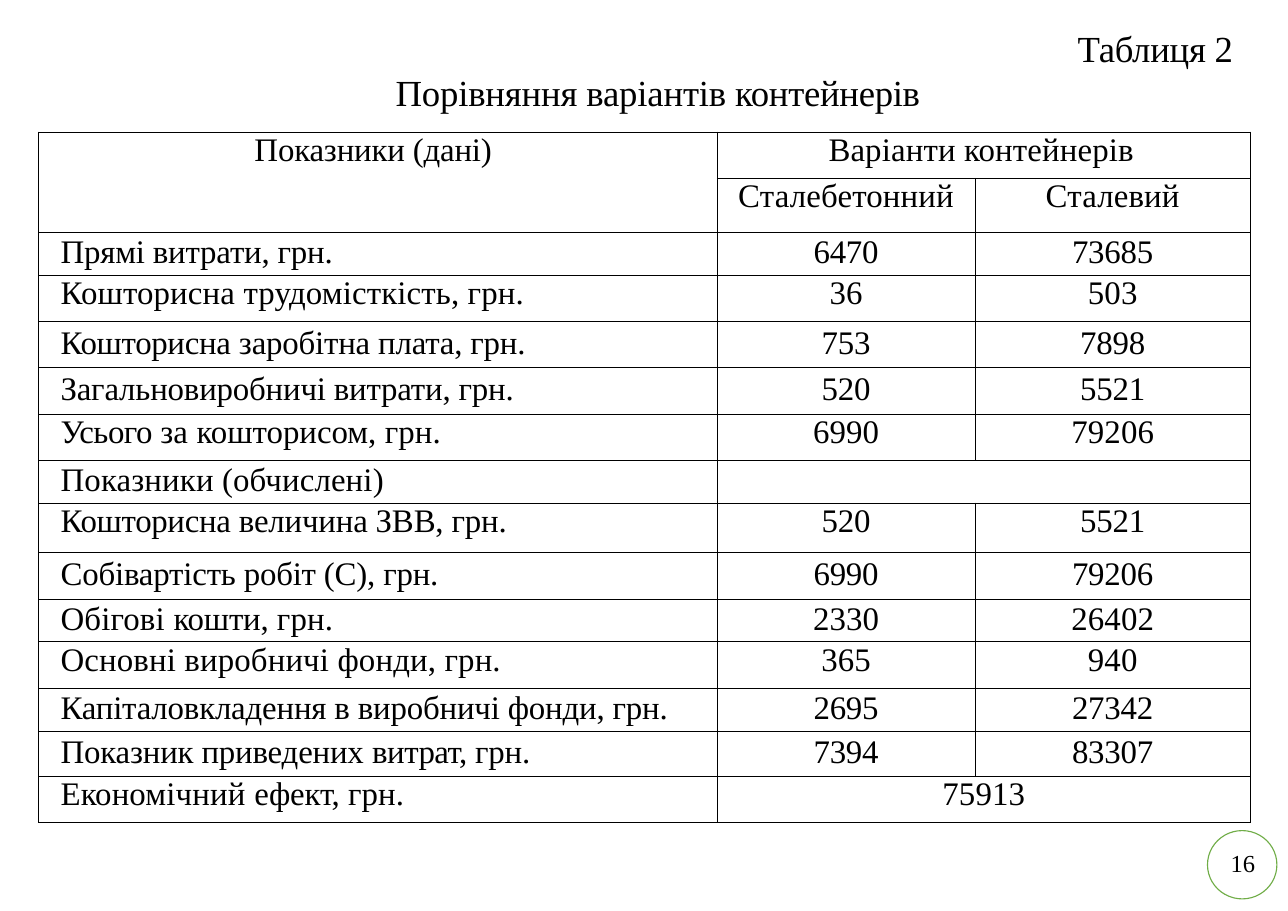
import pptx
import pptx.dml.color
import pptx.enum.shapes
import pptx.enum.text
import pptx.oxml
import pptx.oxml.ns
import pptx.util

Inches, Pt = pptx.util.Inches, pptx.util.Pt
ALIGN = pptx.enum.text.PP_ALIGN
ANCHOR = pptx.enum.text.MSO_ANCHOR

# Content: label runs as (text, letter spacing), values, row height, line height
HEADS = ["Показники (дані)", "Варіанти контейнерів"]
KINDS = ["Сталебетонний", "Сталевий"]
ROWS = [
    ([("Прямі витрати, грн.", -0.1)], ["6470", "73685"], 0.39, 25.1),
    ([("Кошторисна трудомісткість, грн.", 0.1)], ["36", "503"], 0.42, None),
    ([("Кошторисна ", -0.2), ("заробітна плата, грн.", -0.1)],
     ["753", "7898"], 0.42, 26.1),
    ([("Загальновиробничі витрати, грн.", -0.1)], ["520", "5521"], 0.42, 26.2),
    ([("Усього ", -0.3), ("за ", 0.1), ("кошторисом, ", 0), ("грн.", 0.1)],
     ["6990", "79206"], 0.42, None),
    ([("Показники (обчислені)", 0.1)], [], 0.39, 25.1),
    ([("Кошторисна ", -0.2), ("величина ЗВВ, грн.", -0.1)],
     ["520", "5521"], 0.45, None),
    ([("Собівартість робіт (С), грн.", -0.1)], ["6990", "79206"], 0.42, 26.1),
    ([("Обігові ", 0.1), ("кошти, ", -0.1), ("грн.", 0.1)],
     ["2330", "26402"], 0.39, 25),
    ([("Основні виробничі фонди, грн.", 0.1)], ["365", "940"], 0.42, None),
    ([("Капіталовкладення в виробничі фонди, грн.", -0.1)],
     ["2695", "27342"], 0.39, 25.1),
    ([("Показник приведених ", -0.1), ("витрат, ", -0.3), ("грн.", -0.1)],
     ["7394", "83307"], 0.41, 25.9),
    ([("Економічний ", 0.1), ("ефект, ", -0.1), ("грн.", 0.1)],
     ["75913"], 0.42, None),
]
COLS = [6.16, 2.34, 2.5]
HEIGHTS = [0.42, 0.49] + [row[2] for row in ROWS]


def color(code):
    return pptx.dml.color.RGBColor.from_string(code)


def write(frame, text, size=21.5, align=ALIGN.LEFT, lead=None, gap=0):
    """Fill a frame with a string or with (text, letter spacing) runs."""
    para = frame.paragraphs[0]
    para.alignment = align
    if lead:
        para.line_spacing = Pt(lead)
    for part, space in [(text, gap)] if isinstance(text, str) else text:
        run = para.add_run()
        run.text = part
        run.font.size = Pt(size)
        run.font.name = "Times New Roman"
        run.font.color.rgb = color("000000")
        run._r.get_or_add_rPr().set("spc", str(round(space * 100)))


def place(shape, left, top, width, height):
    shape.left, shape.top = Inches(left), Inches(top)
    shape.width, shape.height = Inches(width), Inches(height)
    frame = shape.text_frame
    frame.margin_left = frame.margin_right = 0
    frame.margin_top = frame.margin_bottom = 0
    frame.vertical_anchor = ANCHOR.TOP
    frame.auto_size = pptx.enum.text.MSO_AUTO_SIZE.NONE
    frame.word_wrap = True
    return frame


def border(cell):
    props = cell._tc.get_or_add_tcPr()
    for side in "LRTB":
        props.append(pptx.oxml.parse_xml(
            f'<a:ln{side} {pptx.oxml.ns.nsdecls("a")} w="{Pt(0.71)}">'
            f'<a:solidFill><a:srgbClr val="000000"/></a:solidFill></a:ln{side}>'))


deck = pptx.Presentation()
deck.slide_width, deck.slide_height = Inches(11.69), Inches(8.27)
slide = deck.slides.add_slide(deck.slide_layouts[5])
shapes = slide.shapes

# Title and caption
title = place(shapes.title, 9.78, 0.23, 1.5, 0.41)
write(title, [("Таблиця ", -0.2), ("2", 0)], size=24)
caption = place(shapes.add_textbox(0, 0, 0, 0), 3.59, 0.63, 4.9, 0.41)
write(caption, [("Порівняння варіантів ", -0.1), ("контейнерів", -0.2)], size=24)

# Table grid
table = shapes.add_table(len(HEIGHTS), len(COLS), Inches(0.35), Inches(1.2),
                         Inches(sum(COLS)), Inches(sum(HEIGHTS))).table
table.first_row = table.horz_banding = False
for col, width in zip(table.columns, COLS):
    col.width = Inches(width)
for row, height in zip(table.rows, HEIGHTS):
    row.height = Inches(height)
for cell in table.iter_cells():
    cell.margin_left = cell.margin_right = 0
    cell.margin_top = cell.margin_bottom = 0
    border(cell)
    cell.fill.background()

# Table heads
table.cell(0, 0).merge(table.cell(1, 0))
table.cell(0, 1).merge(table.cell(0, 2))
for c, (text, inset, gap) in enumerate(zip(HEADS, [1.96, 1.01], [-0.1, 0.1])):
    head = table.cell(0, c)
    head.margin_left = Inches(inset)
    write(head.text_frame, text, gap=gap)
for c, text in enumerate(KINDS, 1):
    write(table.cell(1, c).text_frame, text, align=ALIGN.CENTER, gap=0.1)

# Table body
for r, (label, values, height, lead) in enumerate(ROWS, 2):
    first = table.cell(r, 0)
    first.margin_left = Inches(0.2)
    write(first.text_frame, label, lead=lead)
    if len(values) < 2:
        table.cell(r, 1).merge(table.cell(r, 2))
    for c, value in enumerate(values, 1):
        write(table.cell(r, c).text_frame, value, align=ALIGN.CENTER,
              lead=lead, gap=label[-1][1])

# Page number in a ring
ring = shapes.add_shape(pptx.enum.shapes.MSO_SHAPE.OVAL, Inches(10.96),
                        Inches(7.54), Inches(0.63), Inches(0.62))
ring.shadow.inherit = False
ring.fill.background()
ring.line.color.rgb = color("70AD47")
ring.line.width = Pt(0.75)
number = place(shapes.add_textbox(0, 0, 0, 0), 11.14, 7.73, 0.28, 0.25)
write(number, "16", size=16, align=ALIGN.CENTER, lead=17.1)

deck.save("out.pptx")
